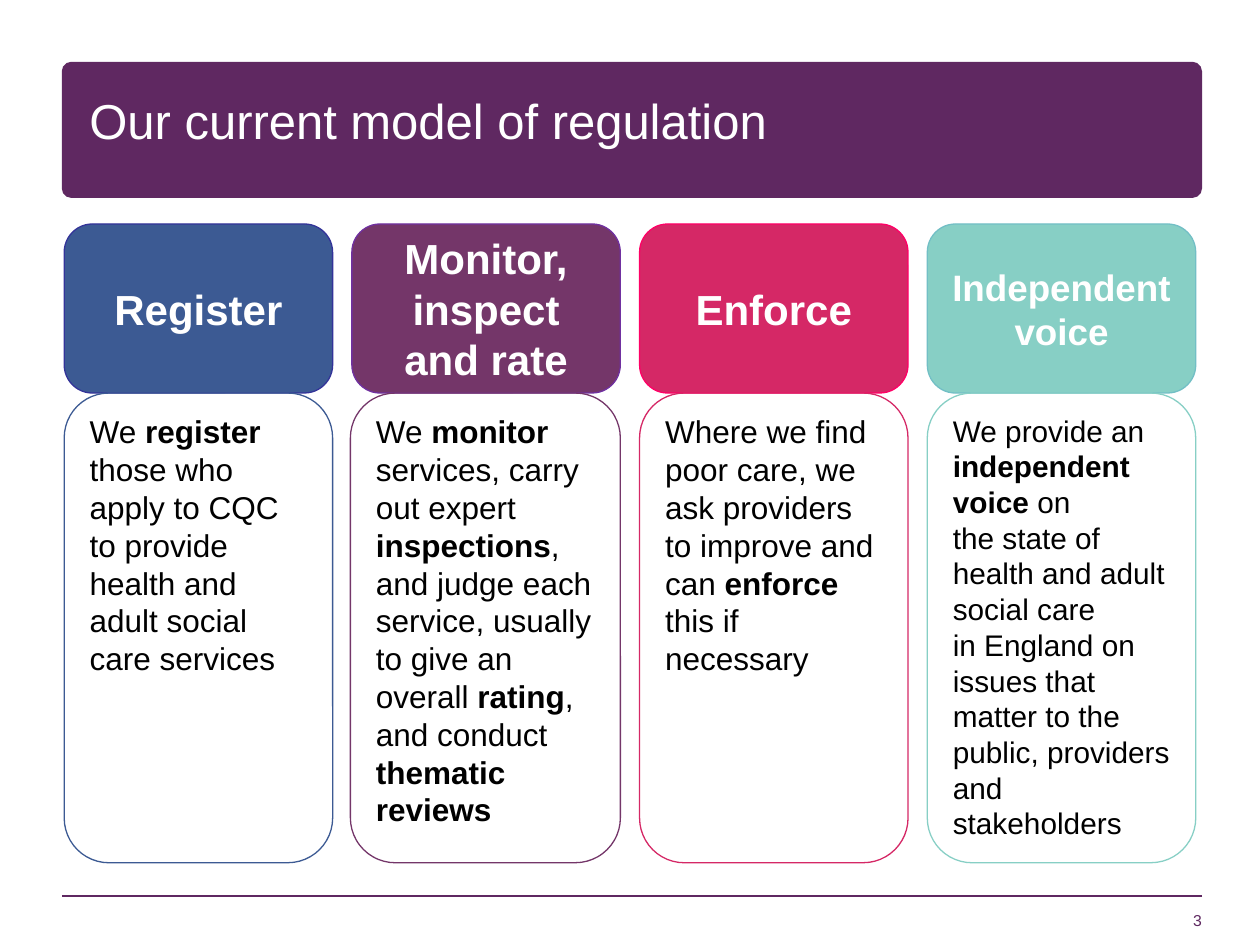
from dataclasses import dataclass
from typing import Optional

from pptx import Presentation
from pptx.dml.color import RGBColor
from pptx.enum.shapes import MSO_CONNECTOR, MSO_SHAPE
from pptx.enum.text import MSO_ANCHOR, MSO_AUTO_SIZE, PP_ALIGN
from pptx.oxml.ns import qn
from pptx.util import Pt


@dataclass(frozen=True)
class Theme:
    font: str = "Arial"
    plum: str = "5F2861"
    white: str = "FFFFFF"
    black: str = "000000"
    title: float = 28
    number: float = 9
    outline: float = 0.75
    rule: float = 1


@dataclass(frozen=True)
class Pillar:
    name: str
    color: str
    edge: str
    name_size: float
    body_size: float
    body: list[str]
    outset: float = 0


T = Theme()
LEFT, PITCH, WIDTH = 36.7, 164.4, 153.4
HEAD_TOP, HEAD_H, BODY_H = 128, 96.6, 268.4

PILLARS = [
    Pillar("Register", "3C5A93", "333399", 24, 18, [
        "We *register *those who apply to CQC to provide health and adult social care services",
    ]),
    Pillar("Monitor, inspect and rate", "743669", "7030A0", 24, 18, [
        "We *monitor*",
        "services, carry out expert",
        "*inspections*, and judge each service, usually to give an overall *rating*, "
        "and conduct *thematic reviews*",
    ], outset=0.9),
    Pillar("Enforce", "D52866", "FF0066", 24, 18, [
        "Where we find poor care, we ask providers to improve and can *enforce *this if necessary",
    ]),
    Pillar("Independent voice", "87CFC5", "72BFC5", 21, 17, [
        "We provide an *independent voice *on",
        "the state of health and adult social care",
        "in England on issues that matter to the",
        "public, providers and stakeholders",
    ]),
]


def rgb(value: str) -> RGBColor:
    return RGBColor.from_string(value)


def set_all(obj, **fmt) -> None:
    for key, value in fmt.items():
        setattr(obj, key, value)


def write(tf, paragraphs: list[str], size: float, color: str,
          align=PP_ALIGN.LEFT, bold: bool = False) -> None:
    for i, text in enumerate(paragraphs):
        p = tf.add_paragraph() if i else tf.paragraphs[0]
        p.alignment = align
        for j, part in enumerate(text.split("*")):
            if part:
                r = p.add_run()
                r.text = part
                set_all(r.font, name=T.font, size=Pt(size), bold=bold or j % 2 == 1)
                r.font.color.rgb = rgb(color)


def set_frame(tf, anchor, margin: float) -> None:
    set_all(tf, word_wrap=True, auto_size=MSO_AUTO_SIZE.NONE, vertical_anchor=anchor,
            margin_left=Pt(margin), margin_right=Pt(margin),
            margin_top=Pt(margin), margin_bottom=Pt(margin))


def add_round(s, x: float, y: float, w: float, h: float,
              fill: Optional[str], line: Optional[str]):
    sp = s.shapes.add_shape(MSO_SHAPE.ROUNDED_RECTANGLE, Pt(x), Pt(y), Pt(w), Pt(h))
    sp.shadow.inherit = False
    if fill:
        sp.fill.solid()
        sp.fill.fore_color.rgb = rgb(fill)
    else:
        sp.fill.background()
    if line:
        sp.line.color.rgb = rgb(line)
        sp.line.width = Pt(T.outline)
    else:
        sp.line.fill.background()
    return sp


def add_header(s) -> None:
    band = add_round(s, 35.3, 35.3, 651.6, 77.8, T.plum, None)
    band.adjustments[0] = 0.07
    sp = s.shapes.title
    band._element.addnext(sp._element)
    set_all(sp, left=Pt(47.5), top=Pt(53.3), width=Pt(440.6), height=Pt(36))
    set_frame(sp.text_frame, MSO_ANCHOR.TOP, 3.6)
    write(sp.text_frame, ["Our current model of regulation"], T.title, T.white)
    sp.text_frame.paragraphs[0].line_spacing = 0.85


def add_footer(s) -> None:
    rule = s.shapes.add_connector(MSO_CONNECTOR.STRAIGHT, Pt(686.9), Pt(512), Pt(35.3), Pt(512))
    rule.line.color.rgb = rgb(T.plum)
    rule.line.width = Pt(T.rule)
    sp_pr = rule._element.spPr
    sp_pr.append(sp_pr.makeelement(qn("a:effectLst"), {}))
    sp = s.shapes.add_textbox(Pt(535.7), Pt(515.5), Pt(151.2), Pt(15.8))
    set_frame(sp.text_frame, MSO_ANCHOR.BOTTOM, 0)
    write(sp.text_frame, ["3"], T.number, T.plum, PP_ALIGN.RIGHT)


def add_pillar(s, x: float, pillar: Pillar) -> None:
    head = add_round(s, x, HEAD_TOP, WIDTH, HEAD_H, pillar.color, pillar.edge)
    head.text_frame.word_wrap = True
    head.text_frame.vertical_anchor = MSO_ANCHOR.MIDDLE
    write(head.text_frame, [pillar.name], pillar.name_size, T.white, PP_ALIGN.CENTER, True)
    body = add_round(s, x - pillar.outset, HEAD_TOP + HEAD_H, WIDTH + pillar.outset, BODY_H,
                     None, pillar.color)
    body.text_frame.word_wrap = True
    body.text_frame.vertical_anchor = MSO_ANCHOR.TOP
    write(body.text_frame, pillar.body, pillar.body_size, T.black)


def main() -> None:
    prs = Presentation()
    set_all(prs, slide_width=Pt(720), slide_height=Pt(540))
    s = prs.slides.add_slide(prs.slide_layouts[5])
    add_header(s)
    add_footer(s)
    for i, pillar in enumerate(PILLARS):
        add_pillar(s, LEFT + i * PITCH, pillar)
    prs.save("out.pptx")


if __name__ == "__main__":
    main()
